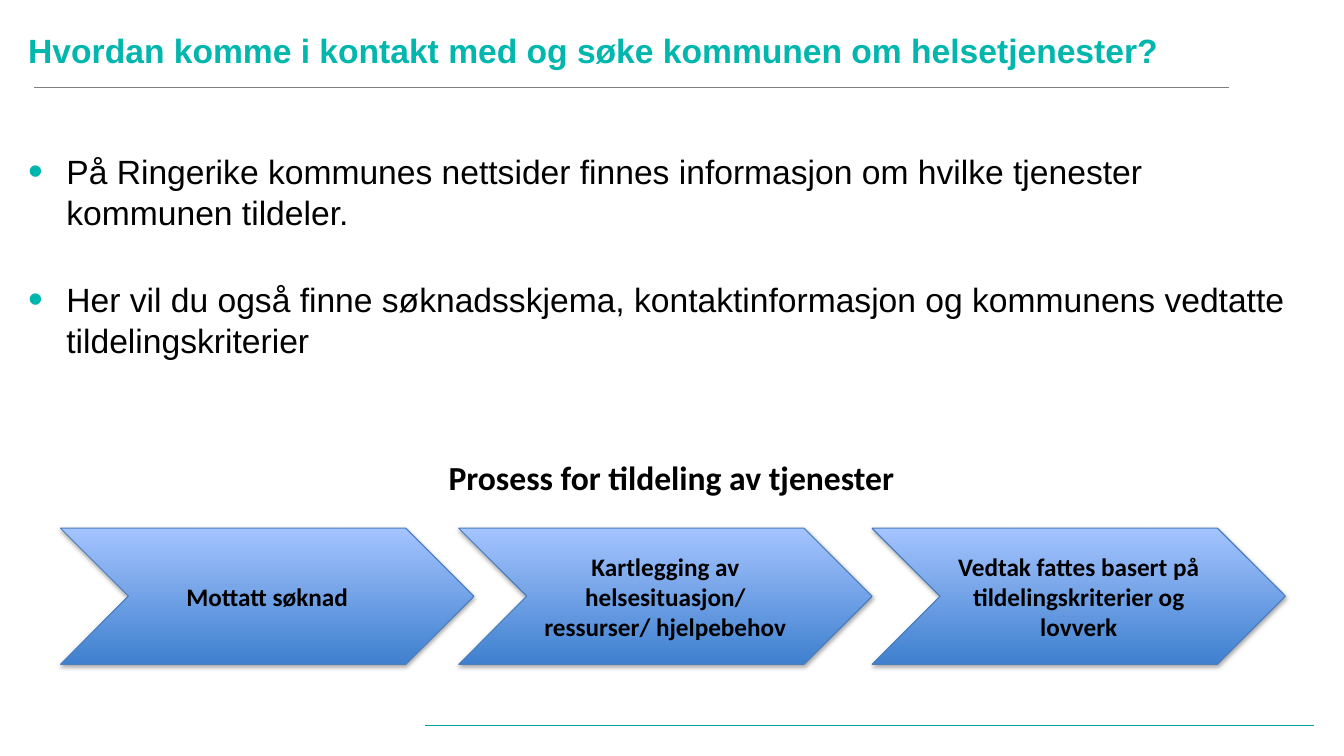
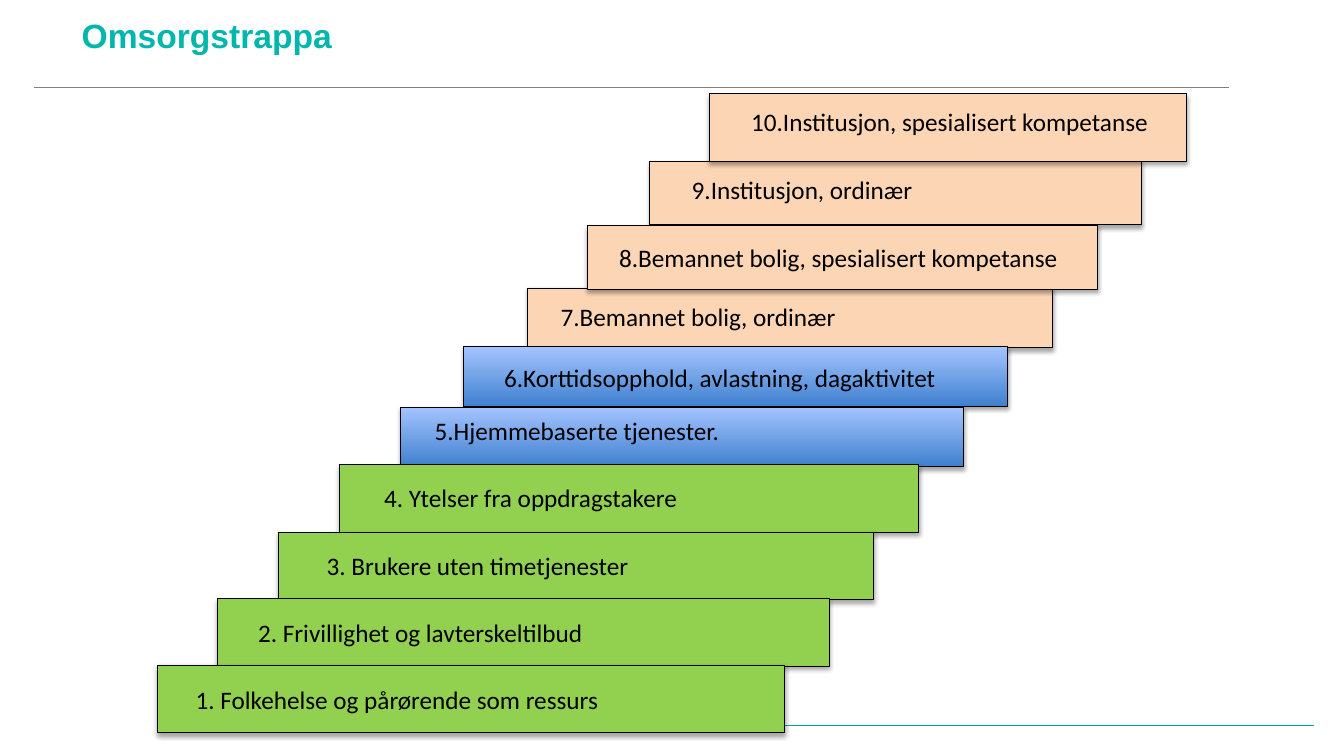
from lxml import etree
from pptx import Presentation
from pptx.dml.color import RGBColor
from pptx.enum.shapes import MSO_CONNECTOR, MSO_SHAPE
from pptx.enum.text import MSO_ANCHOR, MSO_AUTO_SIZE, PP_ALIGN
from pptx.oxml import parse_xml
from pptx.oxml.ns import nsdecls, qn
from pptx.util import Inches, Pt

COLORS = {
    "title": "01B6AD", "top rule": "808080", "bottom rule": "00A498",
    "text": "000000", "edge": "000000", "chevron edge": "4B7EBC",
    "blue dark": "3F80CE", "blue light": "A4C4FF",
    "green": "92D050", "peach": "FCD5B5",
}
RGB = {name: RGBColor.from_string(value) for name, value in COLORS.items()}
SHADOW = (
    f'<a:outerShdw {nsdecls("a")} blurRad="40000" dist="23000" dir="5400000" rotWithShape="0">'
    '<a:srgbClr val="000000"><a:alpha val="35000"/></a:srgbClr></a:outerShdw>'
)
RULES = [  # left, right, height on the page, colour, weight
    (0.34, 12.19, 0.87, "top rule", 0.5),
    (4.22, 13.03, 7.2, "bottom rule", 0.75),
]


def add_page(title_text, left, top, width):
    """Add a page with the two rules and the formatted title."""
    page = deck.slides.add_slide(deck.slide_layouts[5])
    for start, end, y, color, weight in RULES:
        rule = page.shapes.add_connector(
            MSO_CONNECTOR.STRAIGHT, Inches(start), Inches(y), Inches(end), Inches(y))
        rule.line.color.rgb = RGB[color]
        rule.line.width = Pt(weight)
        etree.SubElement(rule._element.spPr, qn("a:effectLst"))
    title = page.shapes.title
    title.left, title.top = Inches(left), Inches(top)
    title.width, title.height = Inches(width), Inches(0.56)
    frame = title.text_frame
    frame.text = title_text
    frame.auto_size = MSO_AUTO_SIZE.NONE
    frame.vertical_anchor = MSO_ANCHOR.MIDDLE
    para = frame.paragraphs[0]
    para.alignment = PP_ALIGN.LEFT
    para.font.name, para.font.size, para.font.bold = "Arial", Pt(24), True
    para.font.color.rgb = RGB["title"]
    return page


def add_block(page, kind, at, fill, edge, text):
    """Add a shadowed shape, with a blue gradient or a plain fill, and its label."""
    block = page.shapes.add_shape(kind, *map(Inches, at))
    if fill == "blue":
        block.fill.gradient()
        block.fill.gradient_angle = 90
        for stop, position, color in zip(
                block.fill.gradient_stops, (0, 1), ("blue dark", "blue light")):
            stop.position = position
            stop.color.rgb = RGB[color]
    else:
        block.fill.solid()
        block.fill.fore_color.rgb = RGB[fill]
    block.line.color.rgb = RGB[edge]
    block.line.width = Pt(0.75)
    block.shadow.inherit = False
    block._element.spPr.find(qn("a:effectLst")).append(parse_xml(SHADOW))
    block.text_frame.text = text
    para = block.text_frame.paragraphs[0]
    para.font.name, para.font.size = "Calibri", Pt(18)
    para.font.color.rgb = RGB["text"]
    return block


deck = Presentation()
deck.slide_width, deck.slide_height = Inches(13.33), Inches(7.5)

# Contact and application
page = add_page("Hvordan komme i kontakt med og søke kommunen om helsetjenester?",
                0.18, 0.22, 13.15)

# Bullets
box = page.shapes.add_textbox(Inches(0.18), Inches(1.45), Inches(12.85), Inches(2))
frame = box.text_frame
frame.word_wrap = True
frame.text = (
    "På Ringerike kommunes nettsider finnes informasjon om hvilke tjenester kommunen tildeler.\n"
    "Her vil du også finne søknadsskjema, kontaktinformasjon og kommunens vedtatte "
    "tildelingskriterier"
)
for para in frame.paragraphs:
    props = para._p.get_or_add_pPr()
    props.set("marL", str(Inches(0.38)))
    props.set("indent", str(-Inches(0.38)))
    bullet_color = etree.SubElement(props, qn("a:buClr"))
    etree.SubElement(bullet_color, qn("a:srgbClr"), val=COLORS["title"])
    etree.SubElement(props, qn("a:buSzPct"), val="125000")
    etree.SubElement(props, qn("a:buFont"), typeface="Arial")
    etree.SubElement(props, qn("a:buChar"), char="•")
    para.font.name, para.font.size = "Arial", Pt(24)
    para.font.color.rgb = RGB["text"]
frame.paragraphs[1].space_before = Pt(34)

# Process chevrons
process = [
    (0.6, "Mottatt søknad"),
    (4.55, "Kartlegging av helsesituasjon/ ressurser/ hjelpebehov"),
    (8.65, "Vedtak fattes basert på tildelingskriterier og lovverk"),
]
for left, text in process:
    chevron = add_block(page, MSO_SHAPE.CHEVRON, (left, 5.24, 4.1, 1.35),
                        "blue", "chevron edge", text)
    chevron.text_frame.vertical_anchor = MSO_ANCHOR.MIDDLE
    para = chevron.text_frame.paragraphs[0]
    para.alignment = PP_ALIGN.CENTER
    para.font.bold = True

# Process heading
box = page.shapes.add_textbox(Inches(4.35), Inches(4.48), Inches(5.55), Inches(0.5))
box.text_frame.word_wrap = True
box.text_frame.text = "Prosess for tildeling av tjenester"
para = box.text_frame.paragraphs[0]
para.font.name, para.font.size, para.font.bold = "Calibri", Pt(24), True
para.font.color.rgb = RGB["text"]

# Care staircase
page = add_page("Omsorgstrappa", 0.71, 0.07, 11.24)

# Steps from back to front: number, left, top, height, fill, text inset left and top, text
steps = [
    (9, 6.44, 1.6, 0.63, "peach", 0.42, 0.13, "9.Institusjon, ordinær"),
    (7, 5.23, 2.86, 0.59, "peach", 0.33, 0.13, "7.Bemannet bolig, ordinær"),
    (6, 4.6, 3.44, 0.59, "blue", 0.4, 0.15, "6.Korttidsopphold, avlastning, dagaktivitet"),
    (5, 3.97, 4.04, 0.59, "blue", 0.34, 0.08, "5.Hjemmebaserte tjenester."),
    (4, 3.37, 4.61, 0.67, "green", 0.44, 0.18, "4. Ytelser fra oppdragstakere"),
    (3, 2.76, 5.28, 0.67, "green", 0.48, 0.18, "3. Brukere uten timetjenester"),
    (2, 2.16, 5.94, 0.67, "green", 0.4, 0.18, "2. Frivillighet og lavterskeltilbud"),
    (1, 1.56, 6.6, 0.67, "green", 0.38, 0.19, "1. Folkehelse og pårørende som ressurs"),
    (8, 5.83, 2.24, 0.63, "peach", 0.31, 0.16, "8.Bemannet bolig, spesialisert kompetanse"),
    (10, 7.04, 0.93, 0.67, "peach", 0.41, 0.12, "10.Institusjon, spesialisert kompetanse"),
]
FIRST_RIGHT, LAST_RIGHT = 7.78, 11.77
for number, left, top, height, fill, inset_left, inset_top, text in steps:
    right = FIRST_RIGHT + (LAST_RIGHT - FIRST_RIGHT) * (number - 1) / (len(steps) - 1)
    step = add_block(page, MSO_SHAPE.RECTANGLE, (left, top, right - left, height),
                     fill, "edge", text)
    frame = step.text_frame
    frame.vertical_anchor = MSO_ANCHOR.TOP
    frame.margin_left, frame.margin_top = Inches(inset_left), Inches(inset_top)
    frame.margin_bottom = 0
    frame.paragraphs[0].alignment = PP_ALIGN.LEFT

deck.save("out.pptx")
